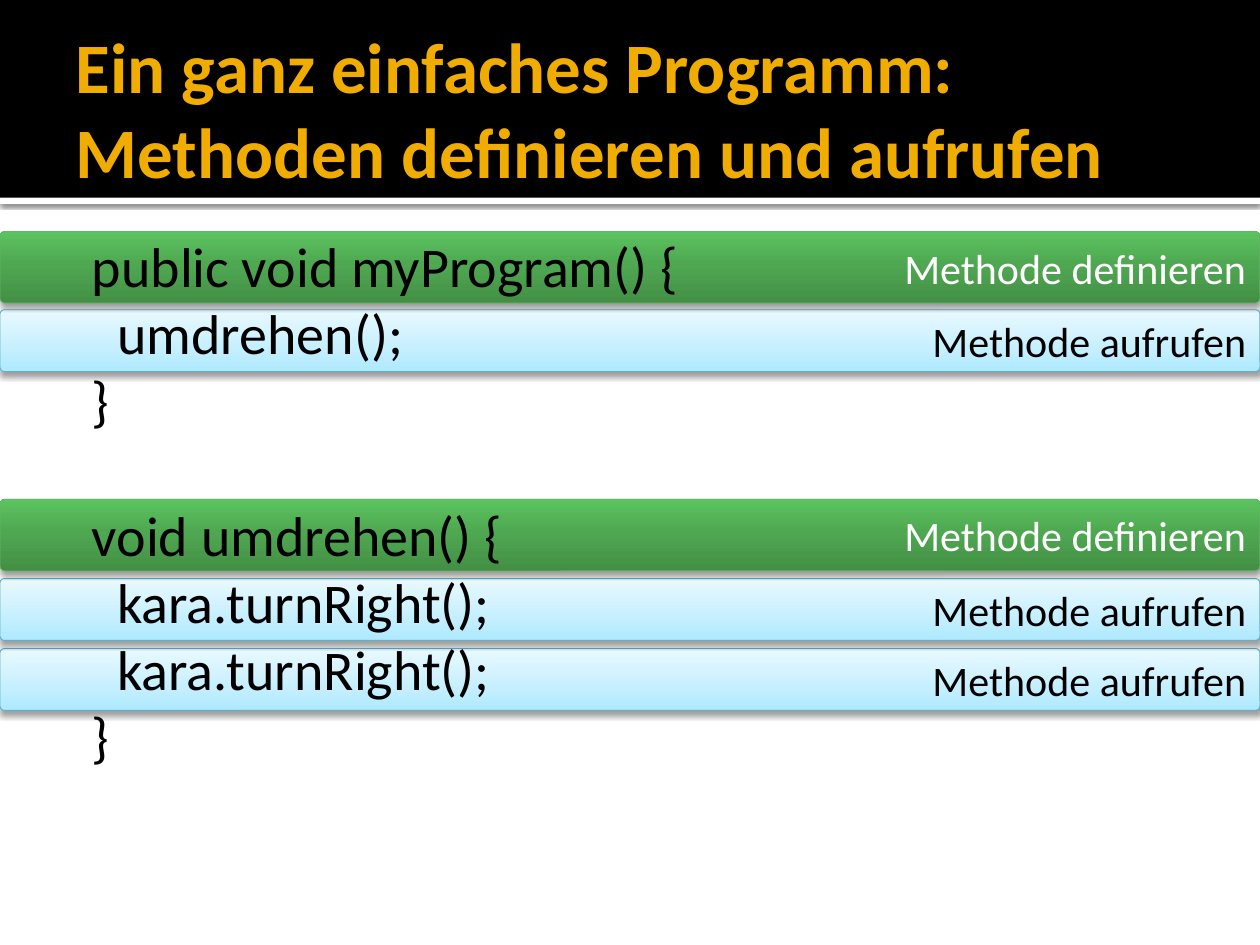
from dataclasses import dataclass
from lxml import etree
from pptx import Presentation
from pptx import util as u
from pptx.dml.color import RGBColor
from pptx.enum import shapes, text
from pptx.oxml import ns


@dataclass(frozen=True)
class Theme:
    font: str = "Calibri"
    black: str = "000000"
    white: str = "FFFFFF"
    gold: str = "F0AD00"
    head: float = 40.5
    code: float = 32
    label: float = 24
    lead: float = 38.35


@dataclass(frozen=True)
class Kind:
    label: str
    high: float
    ink: str
    edge: str
    stops: tuple
    blur: float


DEFINE = Kind("Methode definieren", 41, "FFFFFF", "67B569",
              ((0, "438F45"), (55, "4FA851"), (100, "5CC35F")), 3.1)
CALL = Kind("Methode aufrufen", 35.3, "000000", "5BB3CA",
            ((0, "ADE9FF"), (35, "C5EFFF"), (100, "E9F9FF")), 3.5)


def node(up, tag, **attrs):
    item = etree.SubElement(up, ns.qn("a:" + tag))
    for key, value in attrs.items():
        item.set(key, str(value))
    return item


class Deck:
    def __init__(self, theme, wide, high):
        self.theme = theme
        self.wide = wide
        self.file = Presentation()
        self.file.slide_width = u.Pt(wide)
        self.file.slide_height = u.Pt(high)
        self.slide = self.file.slides.add_slide(self.file.slide_layouts[5])

    def run(self, para, words, size, ink, bold=False):
        run = para.add_run()
        run.text = words
        run.font.name = self.theme.font
        run.font.size = u.Pt(size)
        run.font.bold = bold
        run.font.color.rgb = RGBColor.from_string(ink)

    def shape(self, kind, top, high):
        shape = self.slide.shapes.add_shape(
            kind, 0, u.Pt(top), u.Pt(self.wide), u.Pt(high))
        shape.shadow.inherit = False
        return shape

    def shade(self, shape, blur, dist, alpha):
        effect = shape.element.spPr.find(ns.qn("a:effectLst"))
        outer = node(effect, "outerShdw", blurRad=u.Pt(blur), dist=u.Pt(dist),
                     dir=5400000, algn="ctr", rotWithShape=0)
        ink = node(outer, "srgbClr", val=self.theme.black)
        node(ink, "alpha", val=alpha * 1000)

    def band(self, top, high, ink):
        band = self.shape(shapes.MSO_SHAPE.RECTANGLE, top, high)
        band.fill.solid()
        band.fill.fore_color.rgb = RGBColor.from_string(ink)
        band.line.fill.background()
        return band

    def bar(self, kind, top):
        bar = self.shape(shapes.MSO_SHAPE.ROUNDED_RECTANGLE, top, kind.high)
        bar.adjustments[0] = 0.07
        bar.line.width = u.Pt(0.5)
        bar.line.color.rgb = RGBColor.from_string(kind.edge)
        bar.fill.gradient()
        bar.fill.gradient_angle = 90
        stops = bar.element.spPr.find(".//" + ns.qn("a:gsLst"))
        for old in list(stops):
            stops.remove(old)
        for spot, ink in kind.stops:
            node(node(stops, "gs", pos=spot * 1000), "srgbClr", val=ink)
        self.shade(bar, kind.blur, 2, 38)
        frame = bar.text_frame
        frame.vertical_anchor = text.MSO_ANCHOR.MIDDLE
        para = frame.paragraphs[0]
        para.alignment = text.PP_ALIGN.RIGHT
        self.run(para, kind.label, self.theme.label, kind.ink)

    def title(self, lines, left, top, wide, high):
        title = self.slide.shapes.title
        title.left, title.top = u.Pt(left), u.Pt(top)
        title.width, title.height = u.Pt(wide), u.Pt(high)
        title.element.getparent().append(title.element)
        frame = title.text_frame
        frame.auto_size = text.MSO_AUTO_SIZE.NONE
        frame.word_wrap = True
        frame.vertical_anchor = text.MSO_ANCHOR.MIDDLE
        frame.margin_left = u.Pt(7.2)
        frame.margin_right = u.Pt(3.6)
        para = frame.paragraphs[0]
        para.alignment = text.PP_ALIGN.LEFT
        for at, line in enumerate(lines):
            if at:
                para.add_line_break()
            self.run(para, line, self.theme.head, self.theme.gold, True)

    def code(self, blocks, left, top, wide, high):
        box = self.slide.shapes.add_textbox(
            u.Pt(left), u.Pt(top), u.Pt(wide), u.Pt(high))
        frame = box.text_frame
        frame.word_wrap = True
        para = frame.paragraphs[0]
        for part, block in enumerate(blocks):
            for at, (depth, line) in enumerate(block):
                if part or at:
                    para = frame.add_paragraph()
                para.line_spacing = u.Pt(self.theme.lead)
                para.space_before = u.Pt(self.theme.lead if part and not at else 0)
                props = para._p.get_or_add_pPr()
                props.set("marL", str(u.Pt(9.4 + 14.5 * depth)))
                props.set("indent", "0")
                self.run(para, line, self.theme.code, self.theme.black)


def main():
    theme = Theme()
    deck = Deck(theme, 720, 540)
    rule = deck.band(113, 3.6, theme.white)
    deck.shade(rule, 2.5, 0.8, 60)
    deck.band(0, 113, theme.black)
    for kind, top in ((CALL, 370.6), (CALL, 330.6), (CALL, 177),
                      (DEFINE, 285.3), (DEFINE, 132.3)):
        deck.bar(kind, top)
    deck.title(("Ein ganz einfaches Programm: ", "Methoden definieren und aufrufen"),
               36, 12.2, 648, 98.6)
    deck.code((
        ((0, "public void myProgram() {"), (1, "umdrehen();"), (0, "}")),
        ((0, "void umdrehen() {"), (1, "kara.turnRight();"),
         (1, "kara.turnRight();"), (0, "}")),
    ), 36, 128.9, 426, 317.5)
    deck.file.save("out.pptx")


if __name__ == "__main__":
    main()
